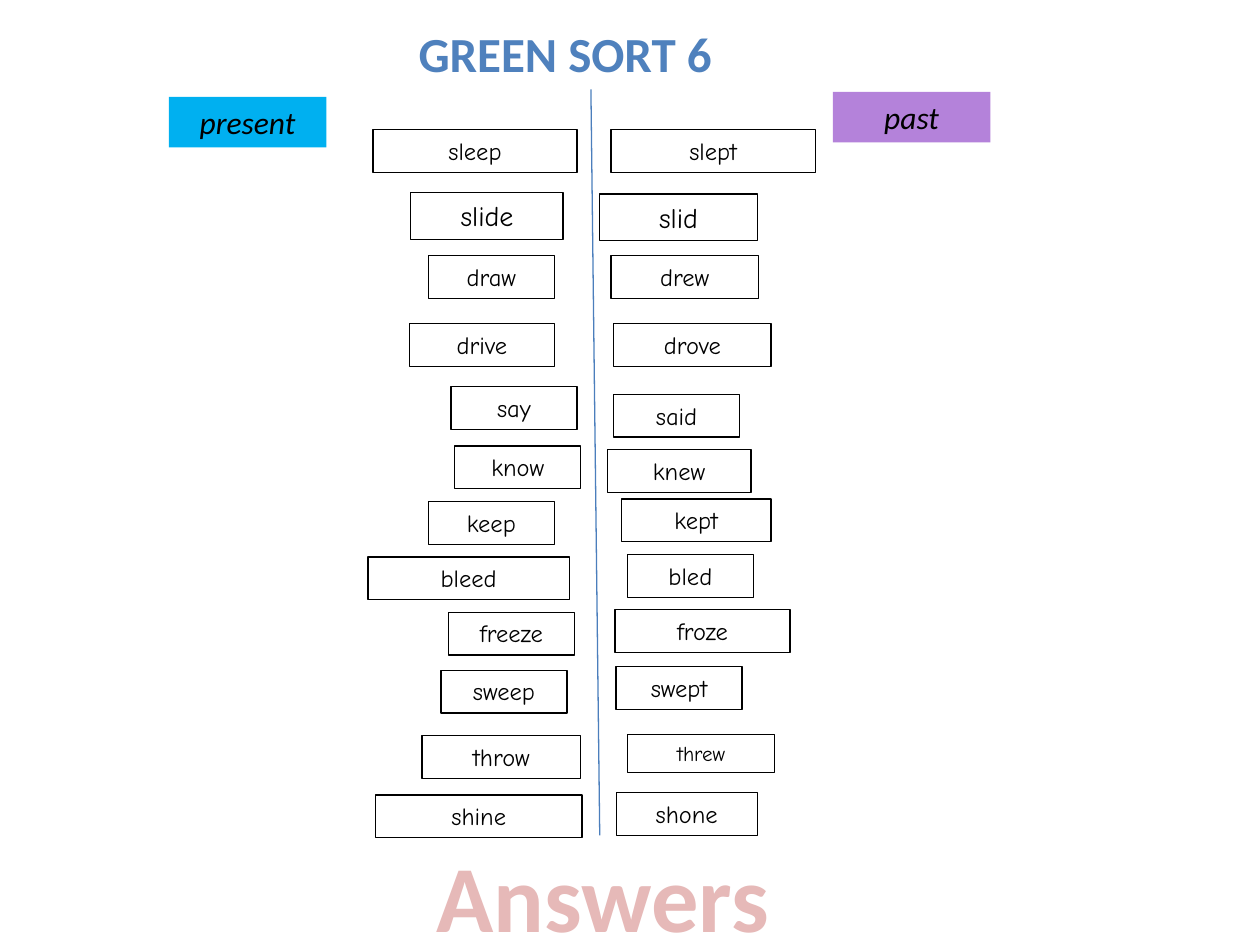
from dataclasses import dataclass

from lxml.etree import SubElement
from pptx import Presentation
from pptx.dml.color import RGBColor
from pptx.enum.shapes import MSO_CONNECTOR, MSO_SHAPE
from pptx.enum.text import MSO_ANCHOR, MSO_AUTO_SIZE, PP_ALIGN
from pptx.oxml.ns import qn
from pptx.util import Inches, Pt


@dataclass(frozen=True)
class Theme:
    """Colours, fonts and type sizes of the slide."""
    ink: str = "000000"
    title: str = "4F81BD"
    divider: str = "4B7EBC"
    present: str = "00B0F0"
    past: str = "B482DA"
    answers: str = "E6B9B8"
    answers_edge: str = "C0504D"
    font: str = "Calibri"
    word_font: str = "Comic Neue"
    title_size: int = 28
    tag_size: int = 18
    word_size: int = 14
    large_word: int = 16
    small_word: int = 12
    answers_size: int = 54
    line_width: float = 0.75
    edge_width: float = 1.75


T = Theme()
WORD_HEIGHTS = {T.small_word: 0.3, T.word_size: 0.34, T.large_word: 0.37}
WORD_SIZES = {"slide": T.large_word, "slid": T.large_word, "threw": T.small_word}

PRESENT_WORDS = [
    ("sleep", 0.04, 0, 1.62), ("slide", 0.34, 0.5, 1.21),
    ("draw", 0.48, 1, 1), ("drive", 0.33, 1.54, 1.15),
    ("say", 0.66, 2.04, 1), ("know", 0.69, 2.51, 1),
    ("keep", 0.48, 2.95, 1), ("bleed", 0, 3.39, 1.6),
    ("freeze", 0.64, 3.83, 1), ("sweep", 0.58, 4.29, 1),
    ("throw", 0.43, 4.81, 1.26), ("shine", 0.06, 5.28, 1.64),
]
PAST_WORDS = [
    ("slept", 0.09, 0, 1.62), ("slid", 0, 0.51, 1.25),
    ("drew", 0.09, 1, 1.17), ("drove", 0.11, 1.54, 1.25),
    ("said", 0.11, 2.1, 1), ("knew", 0.06, 2.54, 1.14),
    ("kept", 0.17, 2.93, 1.19), ("bled", 0.22, 3.37, 1),
    ("froze", 0.12, 3.81, 1.39), ("swept", 0.13, 4.26, 1),
    ("threw", 0.22, 4.8, 1.17), ("shone", 0.13, 5.26, 1.12),
]


def rgb(value):
    """Turn a hex string into a colour."""
    return RGBColor.from_string(value)


def write(sp, text, size, color=T.ink, font=T.font, bold=False, italic=False,
          wrap=True, anchor=MSO_ANCHOR.TOP):
    """Write one centred run into a shape and return the run."""
    tf = sp.text_frame
    tf.word_wrap = wrap
    tf.auto_size = MSO_AUTO_SIZE.SHAPE_TO_FIT_TEXT
    tf.vertical_anchor = anchor
    p = tf.paragraphs[0]
    p.alignment = PP_ALIGN.CENTER
    r = p.add_run()
    r.text = text
    r.font.name = font
    r.font.size = Pt(size)
    r.font.bold = bold
    r.font.italic = italic
    r.font.color.rgb = rgb(color)
    return r


def add_box(s, left, top, width, height):
    """Add a plain rectangle without fill, line or shadow."""
    sp = s.shapes.add_shape(MSO_SHAPE.RECTANGLE, Inches(left), Inches(top),
                            Inches(width), Inches(height))
    sp.shadow.inherit = False
    sp.fill.background()
    sp.line.fill.background()
    return sp


def add_title(s, left, top, width, height):
    """Place the slide title."""
    sp = s.shapes.title
    sp.left, sp.top = Inches(left), Inches(top)
    sp.width, sp.height = Inches(width), Inches(height)
    write(sp, "GREEN SORT 6", T.title_size, T.title, bold=True)


def add_tag(s, text, color, left, top, width=1.25, height=0.4):
    """Add the coloured heading of a column."""
    sp = add_box(s, left, top, width, height)
    sp.fill.solid()
    sp.fill.fore_color.rgb = rgb(color)
    write(sp, text, T.tag_size, italic=True)


def add_words(s, words, left, top):
    """Add a column of framed words, offset from its top left corner."""
    for word, dx, dy, width in words:
        size = WORD_SIZES.get(word, T.word_size)
        sp = add_box(s, left + dx, top + dy, width, WORD_HEIGHTS[size])
        sp.line.color.rgb = rgb(T.ink)
        sp.line.width = Pt(T.line_width)
        write(sp, word, size, font=T.word_font)


def add_divider(s, x1, y1, x2, y2):
    """Draw the line between the two columns."""
    line = s.shapes.add_connector(MSO_CONNECTOR.STRAIGHT, Inches(x1), Inches(y1),
                                  Inches(x2), Inches(y2))
    line.line.color.rgb = rgb(T.divider)
    line.line.width = Pt(T.line_width)
    SubElement(line._element.spPr, qn("a:effectLst"))


def add_answers(s, left, top, width, height):
    """Add the large outlined caption at the foot."""
    sp = s.shapes.add_textbox(Inches(left), Inches(top), Inches(width), Inches(height))
    r = write(sp, "Answers", T.answers_size, T.answers, bold=True, wrap=False)
    rpr = r._r.get_or_add_rPr()
    ln = SubElement(rpr, qn("a:ln"), w=str(Pt(T.edge_width)))
    fill = SubElement(ln, qn("a:solidFill"))
    SubElement(fill, qn("a:srgbClr"), val=T.answers_edge)
    rpr.insert(0, ln)


def main():
    """Build and save the slide."""
    prs = Presentation()
    prs.slide_width, prs.slide_height = Inches(10), Inches(7.5)
    s = prs.slides.add_slide(prs.slide_layouts[5])
    add_title(s, 2.18, 0.14, 4.61, 0.57)
    add_tag(s, "present", T.present, 1.34, 0.77)
    add_tag(s, "past", T.past, 6.61, 0.73)
    add_divider(s, 4.69, 0.71, 4.76, 6.63)
    add_words(s, PRESENT_WORDS, 2.92, 1.03)
    add_words(s, PAST_WORDS, 4.76, 1.03)
    add_answers(s, 3.35, 6.6, 2.87, 1.01)
    prs.save("out.pptx")


if __name__ == "__main__":
    main()
